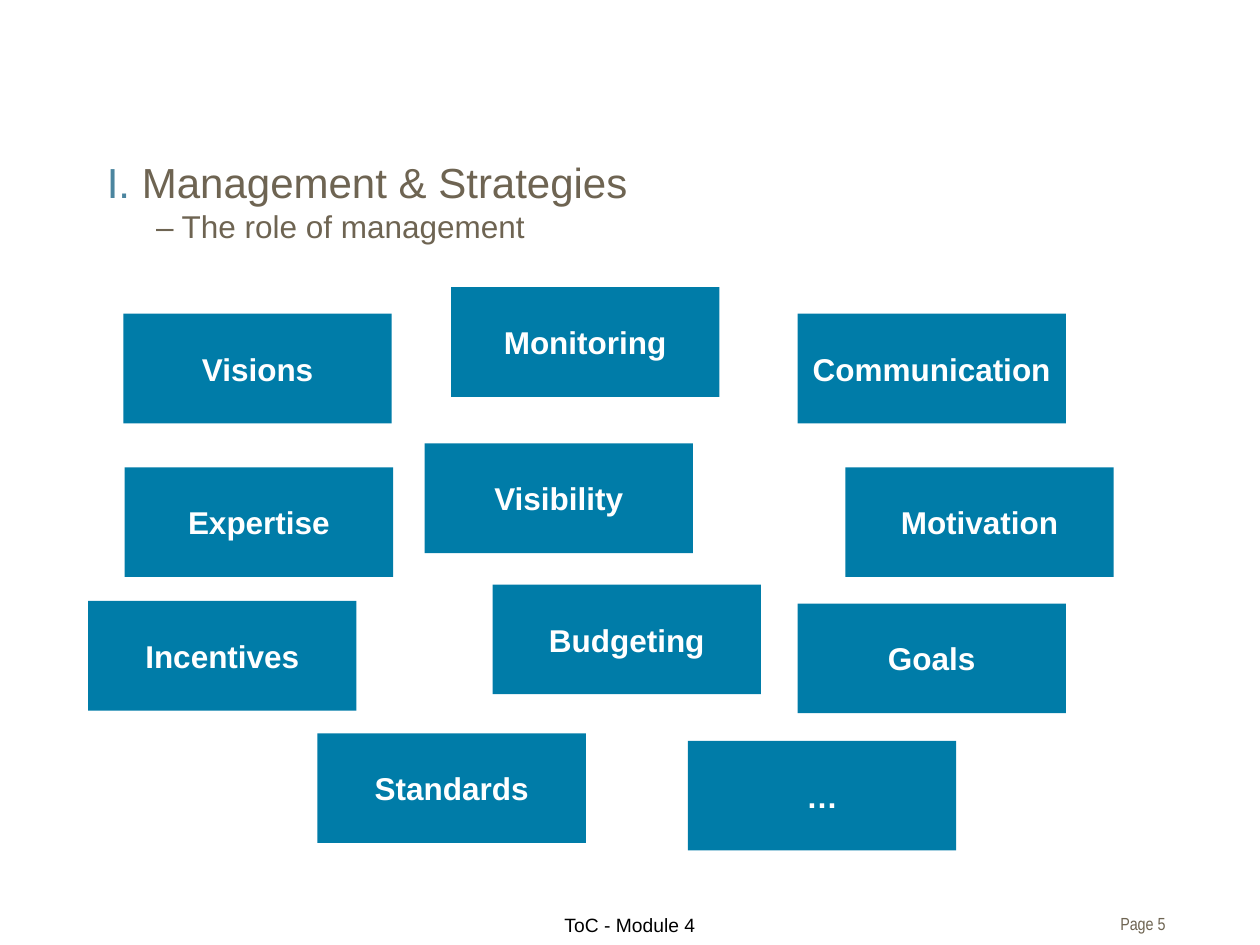
"""Build a slide of scattered topic tiles on the role of management."""
from typing import NamedTuple

from pptx import Presentation
from pptx.dml.color import RGBColor
from pptx.enum.shapes import MSO_SHAPE as Shape
from pptx.enum.text import MSO_ANCHOR as Anchor, PP_ALIGN as Align
from pptx.util import Inches, Pt

BLUE = RGBColor(0x00, 0x7C, 0xA8)
STEEL = RGBColor(0x4B, 0x85, 0x9F)
TAUPE = RGBColor(0x6E, 0x64, 0x52)
WHITE = RGBColor(0xFF, 0xFF, 0xFF)
BLACK = RGBColor(0x00, 0x00, 0x00)

TILE_WIDTH, TILE_HEIGHT = Inches(2.13), Inches(0.87)
TITLE_INDENT = Inches(0.39)


class Tile(NamedTuple):
    label: str
    left: float
    top: float


class Style(NamedTuple):
    size: int
    color: RGBColor
    bold: bool = False
    font: str = "Arial"


TILES = [
    Tile("Visions", 0.98, 2.49),
    Tile("Goals", 6.33, 4.79),
    Tile("Incentives", 0.7, 4.77),
    Tile("Monitoring", 3.58, 2.28),
    Tile("Communication", 6.33, 2.49),
    Tile("Motivation", 6.71, 3.71),
    Tile("Expertise", 0.99, 3.71),
    Tile("Budgeting", 3.91, 4.64),
    Tile("Visibility", 3.37, 3.52),
    Tile("Standards", 2.52, 5.82),
    Tile("…", 5.46, 5.88),
]
TILE_STYLE = Style(18, WHITE, bold=True)


def add_span(para, text: str, style: Style) -> None:
    span = para.add_run()
    span.text = text
    span.font.size = Pt(style.size)
    span.font.name = style.font
    span.font.bold = style.bold
    span.font.color.rgb = style.color


def add_box(page, left: float, top: float, width: float, height: float):
    box = page.shapes.add_textbox(Inches(left), Inches(top), Inches(width), Inches(height))
    box.text_frame.word_wrap = True
    return box.text_frame


def add_title(page) -> None:
    frame = add_box(page, 0.75, 1.16, 8.5, 0.98)
    frame.margin_top = Inches(0.08)
    para = frame.paragraphs[0]
    properties = para._p.get_or_add_pPr()
    properties.set("marL", str(TITLE_INDENT))
    properties.set("indent", str(-TITLE_INDENT))
    add_span(para, "I. ", Style(24, STEEL))
    add_span(para, "Management & Strategies", Style(24, TAUPE))
    para.add_line_break()
    add_span(para, "– The role of management", Style(18, TAUPE))


def add_tile(page, tile: Tile) -> None:
    box = page.shapes.add_shape(
        Shape.RECTANGLE, Inches(tile.left), Inches(tile.top), TILE_WIDTH, TILE_HEIGHT
    )
    box.shadow.inherit = False
    box.fill.solid()
    box.fill.fore_color.rgb = BLUE
    box.line.fill.background()
    box.text_frame.word_wrap = True
    box.text_frame.vertical_anchor = Anchor.MIDDLE
    para = box.text_frame.paragraphs[0]
    para.alignment = Align.CENTER
    add_span(para, tile.label, TILE_STYLE)


def add_footer(page) -> None:
    number = add_box(page, 8.24, 7.2, 1.01, 0.27)
    number.margin_right = 0
    number.paragraphs[0].alignment = Align.RIGHT
    add_span(number.paragraphs[0], "Page 5", Style(10, TAUPE, font="Arial Narrow"))

    module = add_box(page, 3.13, 7.2, 3.74, 0.27)
    module.paragraphs[0].alignment = Align.CENTER
    add_span(module.paragraphs[0], "ToC - Module 4", Style(11, BLACK))


def main() -> None:
    deck = Presentation()
    deck.slide_width, deck.slide_height = Inches(10), Inches(7.5)
    page = deck.slides.add_slide(deck.slide_layouts[6])
    add_title(page)
    for tile in TILES:
        add_tile(page, tile)
    add_footer(page)
    deck.save("out.pptx")


if __name__ == "__main__":
    main()
